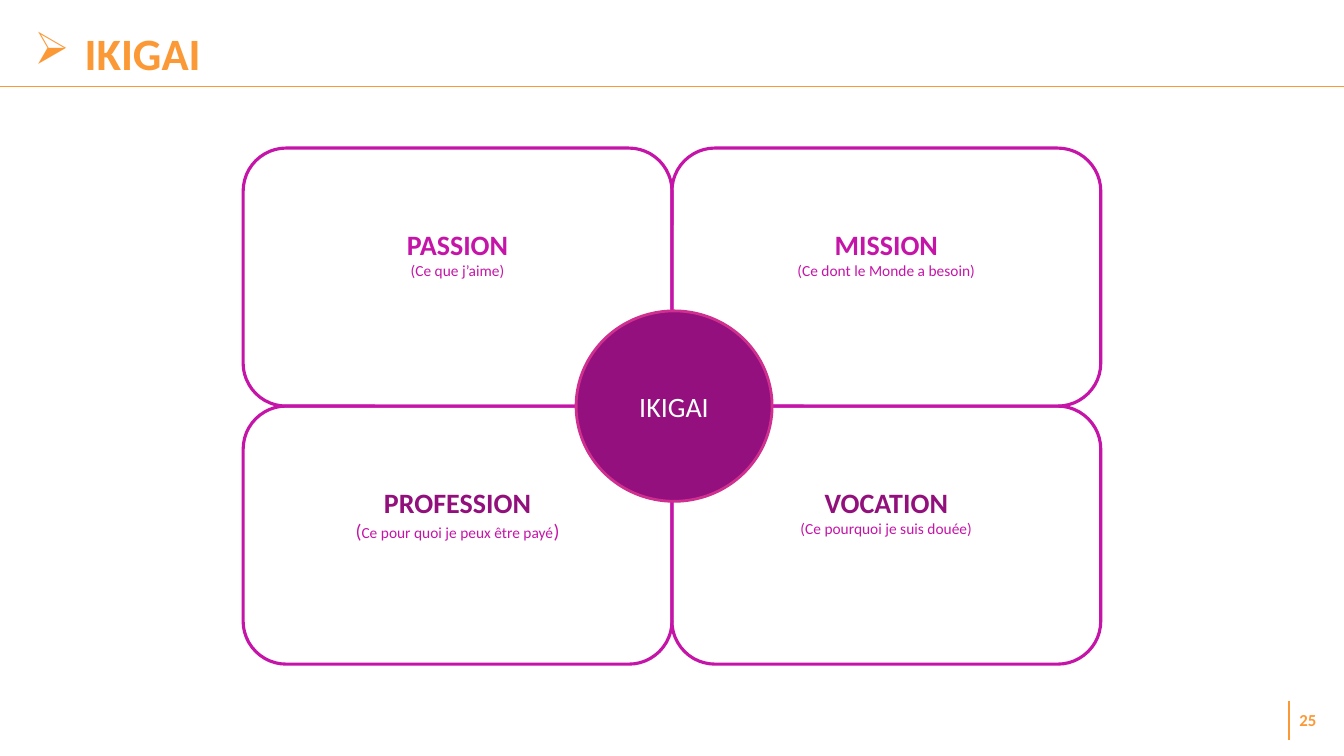
import pptx
import pptx.dml.color
import pptx.enum.shapes
import pptx.enum.text
import pptx.oxml
import pptx.oxml.ns
import pptx.util
from lxml import etree

Pt = pptx.util.Pt
ALIGN = pptx.enum.text.PP_ALIGN
ANCHOR = pptx.enum.text.MSO_ANCHOR
SHAPE = pptx.enum.shapes.MSO_SHAPE
CONNECTOR = pptx.enum.shapes.MSO_CONNECTOR

WIDTH, HEIGHT = 960, 540
FONT = "Calibri"
COLORS = {
    "orange": "FC9937",
    "magenta": "C515A8",
    "plum": "92107C",
    "disc": "93107E",
    "pink": "CF2F8E",
    "white": "FFFFFF",
}
# Heading, heading colour, caption as (text, size) runs; row by row
QUADRANTS = [
    ("PASSION", "magenta", [("(Ce que j’aime)", 11)]),
    ("MISSION", "magenta", [("(Ce dont le Monde a besoin)", 11)]),
    ("PROFESSION", "plum", [("(", 14), ("Ce pour quoi je peux être payé", 11), (")", 14)]),
    ("VOCATION", "plum", [("(Ce pourquoi je suis douée)", 11)]),
]


def rgb(name):
    return pptx.dml.color.RGBColor.from_string(COLORS[name])


def add_text(paragraph, text, size, color, bold=False):
    run = paragraph.add_run()
    run.text = text
    run.font.name = FONT
    run.font.size = Pt(size)
    run.font.bold = bold
    run.font.color.rgb = rgb(color)


def prepare_frame(shape, anchor, top_inset=3.6):
    frame = shape.text_frame
    frame.word_wrap = True
    frame.auto_size = pptx.enum.text.MSO_AUTO_SIZE.NONE
    frame.vertical_anchor = anchor
    frame.margin_left = frame.margin_right = Pt(7.2)
    frame.margin_top, frame.margin_bottom = Pt(top_inset), Pt(3.6)
    return frame


def add_rule(slide, x1, y1, x2, y2, weight):
    rule = slide.shapes.add_connector(CONNECTOR.STRAIGHT, Pt(x1), Pt(y1), Pt(x2), Pt(y2))
    rule.line.color.rgb = rgb("orange")
    rule.line.width = Pt(weight)
    etree.SubElement(rule._element.spPr, pptx.oxml.ns.qn("a:effectLst"))


def add_outlined_shape(shapes, kind, left, top, width, height, line, weight, fill=None):
    shape = shapes.add_shape(kind, Pt(left), Pt(top), Pt(width), Pt(height))
    shape.shadow.inherit = False
    if fill:
        shape.fill.solid()
        shape.fill.fore_color.rgb = rgb(fill)
    else:
        shape.fill.background()
    shape.line.color.rgb = rgb(line)
    shape.line.width = Pt(weight)
    return shape


def add_bullet(paragraph, symbol, color, indent):
    properties = paragraph._p.get_or_add_pPr()
    properties.set("marL", str(Pt(indent)))
    properties.set("indent", str(-Pt(indent)))
    namespace = pptx.oxml.ns.nsdecls("a")
    for xml in (
        f'<a:buClr {namespace}><a:srgbClr val="{COLORS[color]}"/></a:buClr>',
        f'<a:buChar {namespace} char="{symbol}"/>',
    ):
        properties.append(pptx.oxml.parse_xml(xml))


def add_header(slide, left, top, width, height):
    title = slide.shapes.title
    title.left, title.top, title.width, title.height = map(Pt, (left, top, width, height))
    paragraph = prepare_frame(title, ANCHOR.BOTTOM).paragraphs[0]
    paragraph.alignment = ALIGN.LEFT
    paragraph.line_spacing = 0.9
    add_bullet(paragraph, "➢", "orange", 36)
    add_text(paragraph, "IKIGAI", 32, "orange", bold=True)
    rule_y = top + height + 0.8
    add_rule(slide, 0, rule_y, WIDTH, rule_y, 1)


def add_quadrant(shapes, left, top, width, height, heading, color, caption):
    card = add_outlined_shape(shapes, SHAPE.ROUNDED_RECTANGLE, left, top, width, height,
                              "magenta", 2.25)
    card.adjustments[0] = 0.167
    frame = prepare_frame(card, ANCHOR.TOP, top_inset=47.5)
    first, second = frame.paragraphs[0], frame.add_paragraph()
    first.alignment = second.alignment = ALIGN.CENTER
    add_text(first, heading, 20, color, bold=True)
    for text, size in caption:
        add_text(second, text, size, "magenta")


def add_matrix(slide, left, top, width, height):
    group = slide.shapes.add_group_shape()
    card_width, card_height = width / 2, height / 2
    for index, quadrant in enumerate(QUADRANTS):
        row, column = divmod(index, 2)
        add_quadrant(group.shapes, left + column * card_width, top + row * card_height,
                     card_width, card_height, *quadrant)

    disc_width, disc_height = 140, 136
    disc = add_outlined_shape(slide.shapes, SHAPE.OVAL,
                              left + (width - disc_width) / 2 + 1.5,
                              top + (height - disc_height) / 2,
                              disc_width, disc_height, "pink", 2, fill="disc")
    paragraph = prepare_frame(disc, ANCHOR.MIDDLE).paragraphs[0]
    paragraph.alignment = ALIGN.CENTER
    add_text(paragraph, "IKIGAI", 20, "white")


def add_page_number(slide, left, top, width, height):
    add_rule(slide, left, top, left, top + height, 1.5)
    box = slide.shapes.add_textbox(Pt(left), Pt(top), Pt(width), Pt(height))
    paragraph = prepare_frame(box, ANCHOR.MIDDLE).paragraphs[0]
    add_text(paragraph, "25", 12, "orange", bold=True)


def main():
    presentation = pptx.Presentation()
    presentation.slide_width, presentation.slide_height = Pt(WIDTH), Pt(HEIGHT)
    slide = presentation.slides.add_slide(presentation.slide_layouts.get_by_name("Title Only"))
    add_header(slide, 17.3, 1.4, 923, 59.8)
    add_matrix(slide, 173.7, 105.8, 612.6, 368.6)
    add_page_number(slide, 921, 500.4, 35.3, 28.1)
    presentation.save("out.pptx")


if __name__ == "__main__":
    main()
